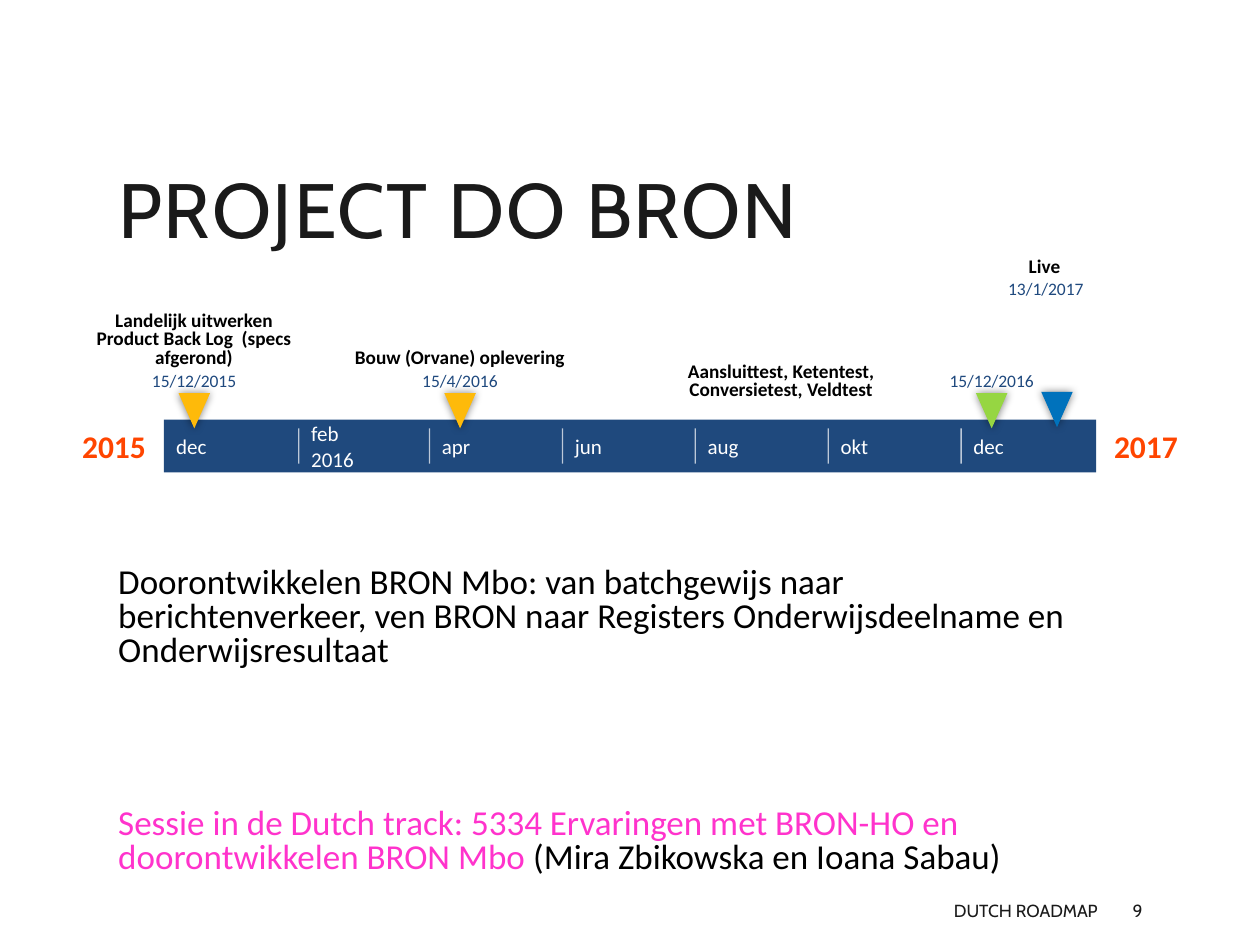
import pptx
import pptx.util
import pptx.dml.color
import pptx.enum.shapes
import pptx.enum.text
import pptx.oxml
import pptx.oxml.ns

Inches = pptx.util.Inches
Pt = pptx.util.Pt
ALIGN = pptx.enum.text.PP_ALIGN
ANCHOR = pptx.enum.text.MSO_ANCHOR

THEME = {
    "colors": {"ink": "1A1A1A", "black": "000000", "white": "FFFFFF", "bar": "1F497D",
               "date": "1F497E", "year": "FF4500", "session": "FF33CC",
               "amber": "FEBA0A", "green": "96D642", "blue": "0072BC"},
    "fonts": {
        "title": {"name": "Cabin", "size": Pt(44)},
        "footer": {"name": "Cabin", "size": Pt(10)},
        "year": {"name": "Calibri", "size": Pt(18), "bold": True},
        "month": {"name": "Calibri", "size": Pt(12)},
        "milestone": {"name": "Calibri", "size": Pt(11), "bold": True},
        "date": {"name": "Calibri", "size": Pt(10)},
        "body": {"name": "Calibri", "size": Pt(20)},
    },
}

TITLE = "PROJECT DO BRON"
FOOTER = "DUTCH ROADMAP"
PAGE = "9"
YEARS = ["2015", "2017"]
MONTHS = [(0, ["dec"]), (62, ["feb", "2016"]), (122, ["apr"]), (183, ["jun"]),
          (244, ["aug"]), (305, ["okt"]), (366, ["dec"])]
TOTAL_DAYS = 428
MARKERS = [(410, 3.11, "blue"), (380, 3.12, "green"), (136, 3.12, "amber"), (14, 3.12, "amber")]
MILESTONES = [
    ("Live", 8.29, 2.2, 0.5, 1),
    ("Aansluittest, Ketentest, Conversietest, Veldtest", 6.2, 3.18, 1.53, 2),
    ("Bouw (Orvane) oplevering", 3.65, 2.92, 1.9, 1),
    ("Landelijk uitwerken Product Back Log  (specs afgerond)", 1.54, 2.92, 1.58, 3),
]
DATES = [("13/1/2017", 8.3, 2.21), ("15/12/2016", 7.87, 2.94),
         ("15/4/2016", 3.65, 2.94), ("15/12/2015", 1.54, 2.94)]
SUMMARY = ("Doorontwikkelen BRON Mbo: van batchgewijs naar berichtenverkeer, "
           "ven BRON naar Registers Onderwijsdeelname en Onderwijsresultaat")
SESSION = "Sessie in de Dutch track: 5334 Ervaringen met BRON-HO en doorontwikkelen BRON Mbo "
SPEAKERS = "(Mira Zbikowska en Ioana Sabau)"

BAR_LEFT, BAR_TOP, BAR_WIDTH, BAR_HEIGHT = 1.3, 3.33, 7.4, 0.42
MONTH_WIDTH, YEAR_WIDTH = 1.06, 0.79
MARKER_WIDTH, MARKER_HEIGHT = 0.25, 0.28
DATE_WIDTH, DATE_HEIGHT = 0.68, 0.17
TICK_INSET = 0.07
LABEL_LINE = 0.15

SNUG = {"margin_left": 0, "margin_right": 0, "margin_top": 0, "margin_bottom": 0}
MIDDLE = {"vertical_anchor": ANCHOR.MIDDLE}
BOTTOM = {"vertical_anchor": ANCHOR.BOTTOM}
TIGHT = {"line_spacing": 0.8}
CENTER = {"alignment": ALIGN.CENTER}


def rgb(color):
    return pptx.dml.color.RGBColor.from_string(THEME["colors"][color])


def apply(target, values):
    for key, value in values.items():
        setattr(target, key, value)


def add_text(slide, box, paragraphs, style, frame_format=None, paragraph_format=None):
    frame = slide.shapes.add_textbox(*map(Inches, box)).text_frame
    apply(frame, {"word_wrap": True, **(frame_format or {})})
    for index, runs in enumerate(paragraphs):
        paragraph = frame.paragraphs[0] if index == 0 else frame.add_paragraph()
        apply(paragraph, paragraph_format or {})
        for words, color in runs:
            run = paragraph.add_run()
            run.text = words
            apply(run.font, THEME["fonts"][style])
            run.font.color.rgb = rgb(color)
    return frame


def add_block(slide, preset, box, color):
    block = slide.shapes.add_shape(preset, *map(Inches, box))
    block.shadow.inherit = False
    block.fill.solid()
    block.fill.fore_color.rgb = rgb(color)
    block.line.fill.background()
    return block


def add_child(parent, tag, **attributes):
    child = pptx.oxml.parse_xml(f"<a:{tag} {pptx.oxml.ns.nsdecls('a')}/>")
    for key, value in attributes.items():
        child.set(key, value)
    parent.append(child)
    return child


def day_x(day):
    return BAR_LEFT + BAR_WIDTH * day / TOTAL_DAYS


def add_tick(slide, x):
    tick = slide.shapes.add_connector(
        pptx.enum.shapes.MSO_CONNECTOR.STRAIGHT, Inches(x), Inches(BAR_TOP + TICK_INSET),
        Inches(x), Inches(BAR_TOP + BAR_HEIGHT - TICK_INSET))
    tick.line.width = Pt(0.75)
    tick.line.color.rgb = rgb("white")
    properties = tick._element.spPr
    add_child(properties.find(".//" + pptx.oxml.ns.qn("a:srgbClr")), "alpha", val="70000")
    add_child(properties, "effectLst")


def add_marker(slide, day, top, color):
    box = (day_x(day) - MARKER_WIDTH / 2, top, MARKER_WIDTH, MARKER_HEIGHT)
    marker = add_block(slide, pptx.enum.shapes.MSO_SHAPE.ISOSCELES_TRIANGLE, box, color)
    marker.rotation = 180
    effects = marker._element.spPr.find(pptx.oxml.ns.qn("a:effectLst"))
    glow = add_child(effects, "outerShdw", blurRad=str(Pt(5)), dist="0", dir="0")
    shade = add_child(glow, "srgbClr", val=THEME["colors"]["black"])
    add_child(shade, "alpha", val="50000")


def add_timeline(slide):
    add_block(slide, pptx.enum.shapes.MSO_SHAPE.RECTANGLE,
              (BAR_LEFT, BAR_TOP, BAR_WIDTH, BAR_HEIGHT), "bar")
    for year, left in zip(YEARS, (BAR_LEFT - YEAR_WIDTH, BAR_LEFT + BAR_WIDTH)):
        add_text(slide, (left, BAR_TOP, YEAR_WIDTH, BAR_HEIGHT), [[(year, "year")]], "year",
                 {**SNUG, **MIDDLE}, CENTER)
    for day, lines in MONTHS:
        if day:
            add_tick(slide, day_x(day))
        add_text(slide, (day_x(day), BAR_TOP, MONTH_WIDTH, BAR_HEIGHT),
                 [[(line, "white")] for line in lines], "month", MIDDLE)
    for marker in MARKERS:
        add_marker(slide, *marker)
    for label, center, bottom, width, lines in MILESTONES:
        height = lines * LABEL_LINE
        add_text(slide, (center - width / 2, bottom - height, width, height),
                 [[(label, "black")]], "milestone", {**SNUG, **BOTTOM}, {**TIGHT, **CENTER})
    for date, center, top in DATES:
        add_text(slide, (center - DATE_WIDTH / 2, top, DATE_WIDTH, DATE_HEIGHT),
                 [[(date, "date")]], "date", {**SNUG, "word_wrap": False}, CENTER)


def main():
    deck = pptx.Presentation()
    apply(deck, {"slide_width": Inches(10), "slide_height": Inches(7.5)})
    slide = deck.slides.add_slide(deck.slide_layouts[6])

    add_text(slide, (3.97, 7.08, 4.84, 0.3), [[(FOOTER, "ink")]], "footer", MIDDLE,
             {"alignment": ALIGN.RIGHT})
    add_text(slide, (8.89, 7.08, 0.8, 0.3), [[(PAGE, "ink")]], "footer", MIDDLE)
    add_timeline(slide)

    title = add_text(slide, (0.84, 0.64, 7.97, 1.64), [[(TITLE, "ink")]], "title",
                     {**BOTTOM, "margin_bottom": Inches(0.27)}, TIGHT)
    title.paragraphs[0].runs[0].font._element.set("spc", "100")

    body = add_text(slide, (0.84, 4.46, 7.97, 2.44),
                    [[(SUMMARY, "black")], [(SESSION, "session"), (SPEAKERS, "black")]],
                    "body", None, {**TIGHT, "space_after": Pt(2)})
    body.paragraphs[1].space_before = Pt(78)

    deck.save("out.pptx")


if __name__ == "__main__":
    main()
